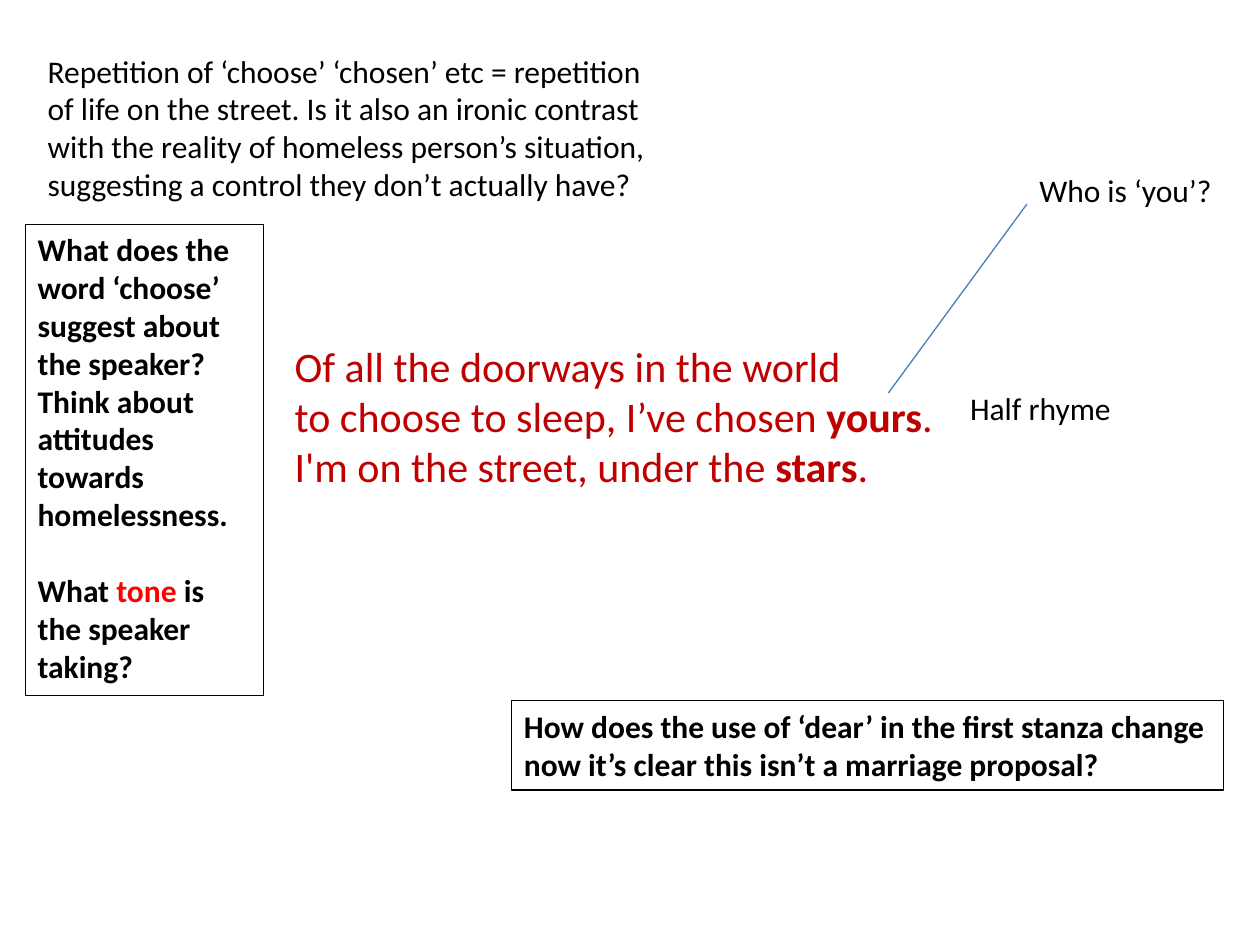
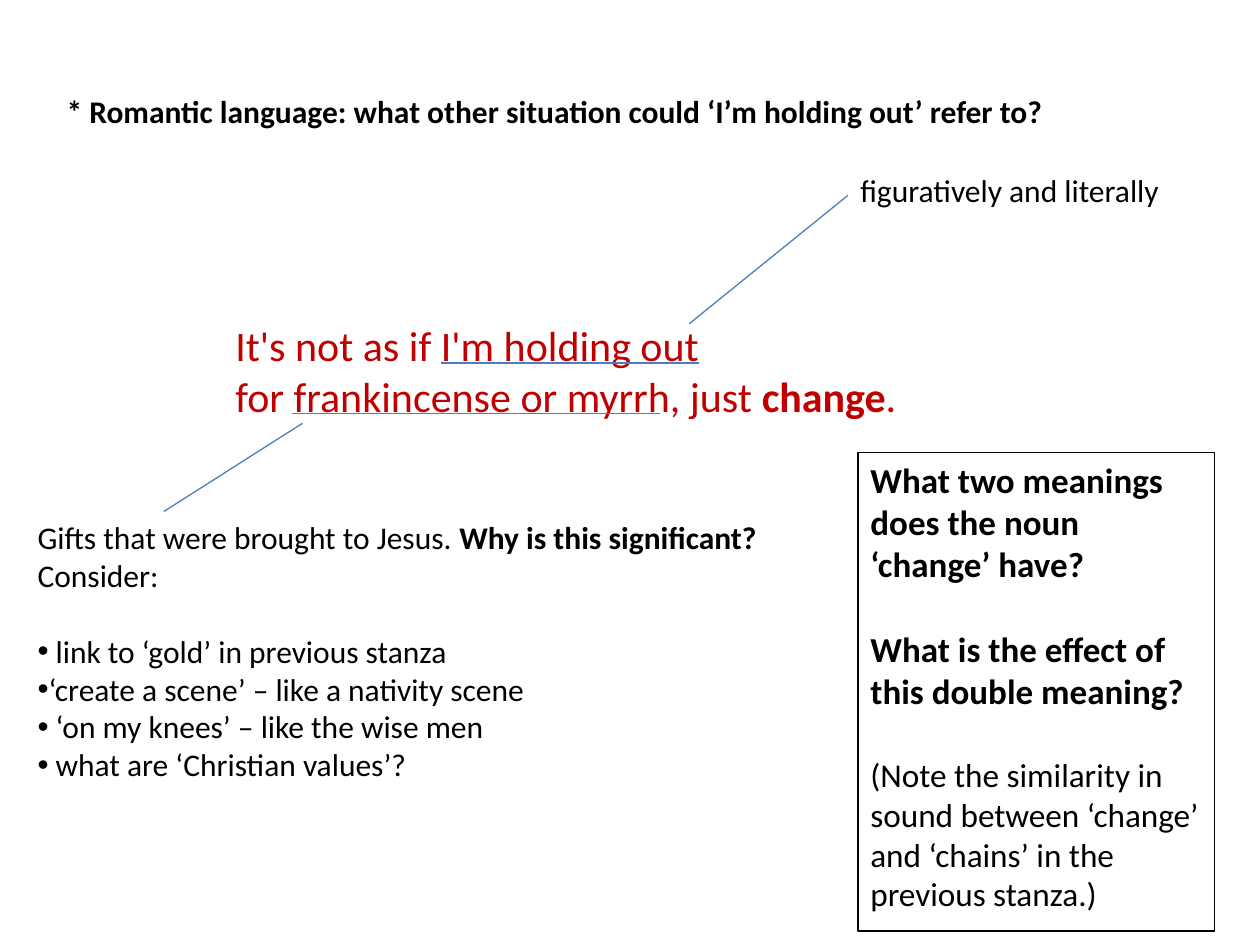
from pptx import Presentation
from pptx.dml.color import RGBColor
from pptx.enum import shapes, text
from pptx.oxml.ns import qn
from pptx.util import Inches, Pt
from lxml import etree

COLOURS = {"ink": "000000", "poem": "C00000", "tone": "FF0000", "link": "4B7EBC"}
FONT = "Calibri"
NOTE_SIZE = 18
POEM_SIZE = 24
LINE_HEIGHT = 1.22


def colour(name):
    return RGBColor.from_string(COLOURS[name])


def add_piece(paragraph, wording, size, ink, bold):
    for index, line in enumerate(wording.split("\n")):
        if index:
            paragraph.add_line_break()
        run = paragraph.add_run()
        run.text = line
        run.font.name = FONT
        run.font.size = Pt(size)
        run.font.bold = bold
        run.font.color.rgb = colour(ink)


def add_bullet(paragraph):
    properties = paragraph._p.get_or_add_pPr()
    etree.SubElement(properties, qn("a:buFont")).set("typeface", "Arial")
    etree.SubElement(properties, qn("a:buChar")).set("char", "•")


def add_note(slide, left, top, width, height, paragraphs, size=NOTE_SIZE,
             ink="ink", bold=False, wrap=False, boxed=False):
    note = slide.shapes.add_textbox(Inches(left), Inches(top), Inches(width), Inches(height))
    if boxed:
        note.line.color.rgb = colour("ink")
        note.line.width = Pt(0.75)
    frame = note.text_frame
    frame.word_wrap = wrap
    frame.auto_size = text.MSO_AUTO_SIZE.SHAPE_TO_FIT_TEXT
    for index, content in enumerate(paragraphs):
        paragraph = frame.paragraphs[0] if index == 0 else frame.add_paragraph()
        if content.get("gap"):
            paragraph.space_before = Pt(round(size * LINE_HEIGHT, 1))
        if content.get("bullet"):
            add_bullet(paragraph)
        for wording, changes in content["pieces"]:
            style = {"size": size, "ink": ink, "bold": bold, **changes}
            add_piece(paragraph, wording, **style)


def para(*pieces, gap=False, bullet=False):
    pairs = [(piece, {}) if isinstance(piece, str) else piece for piece in pieces]
    return {"pieces": pairs, "gap": gap, "bullet": bullet}


def strong(wording):
    return wording, {"bold": True}


def add_link(slide, start, end):
    link = slide.shapes.add_connector(
        shapes.MSO_CONNECTOR.STRAIGHT, *(Inches(value) for value in start + end))
    link.line.color.rgb = colour("link")
    link.line.width = Pt(0.75)
    etree.SubElement(link._element.spPr, qn("a:effectLst"))


def build_doorways(slide):
    add_note(slide, 2.24, 2.65, 5.29, 1.62, [
        para("Of all the doorways in the world\nto choose to sleep, I’ve chosen ",
             strong("yours"), ".\nI'm on the street, under the ", strong("stars"), "."),
    ], size=POEM_SIZE, ink="poem")
    add_note(slide, 0.2, 1.78, 1.89, 3.74, [
        para("What does the word ‘choose’ suggest about the speaker? "
             "Think about attitudes towards homelessness."),
        para("What ", ("tone", {"ink": "tone"}), " is the speaker taking?", gap=True),
    ], bold=True, wrap=True, boxed=True)
    add_note(slide, 7.6, 3.04, 1.39, 0.4, [para("Half rhyme")])
    add_note(slide, 4.06, 5.56, 5.65, 0.71, [
        para("How does the use of ‘dear’ in the first stanza change"),
        para("now it’s clear this isn’t a marriage proposal?"),
    ], bold=True, boxed=True)
    add_link(slide, (7.05, 3.12), (8.15, 1.62))
    add_note(slide, 8.15, 1.31, 1.59, 0.4, [para("Who is ‘you’?")])
    add_note(slide, 0.28, 0.36, 5, 1.31, [
        para("Repetition of ‘choose’ ‘chosen’ etc = repetition of life on the street. "
             "Is it also an ironic contrast with the reality of homeless person’s "
             "situation, suggesting a control they don’t actually have?"),
    ], wrap=True)


def build_change(slide):
    add_note(slide, 1.77, 2.49, 5.83, 0.91, [
        para("It's not as if I'm holding out\nfor frankincense or myrrh, just ",
             strong("change"), "."),
    ], size=POEM_SIZE, ink="poem", wrap=True)
    add_link(slide, (3.5, 2.88), (5.55, 2.88))
    add_link(slide, (5.47, 2.57), (6.73, 1.55))
    add_note(slide, 6.73, 1.31, 2.6, 0.4, [para("figuratively and literally")])
    add_link(slide, (2.4, 3.36), (1.3, 4.06))
    considerations = [
        " link to ‘gold’ in previous stanza",
        "‘create a scene’ – like a nativity scene",
        " ‘on my knees’ – like the wise men",
        " what are ‘Christian values’?",
    ]
    add_note(slide, 0.2, 4.06, 6.03, 2.22, [
        para("Gifts that were brought to Jesus. ", strong("Why is this significant?")),
        para("Consider:"),
        *(para(wording, gap=index == 0, bullet=True)
          for index, wording in enumerate(considerations)),
    ])
    add_link(slide, (2.32, 3.28), (5.24, 3.28))
    add_note(slide, 6.81, 3.59, 2.83, 3.8, [
        para("What two meanings does the noun ‘change’ have?"),
        para("What is the effect of this double meaning?", gap=True),
        para(("(Note the similarity in sound between ‘change’ and ‘chains’ "
              "in the previous stanza.)", {"size": 19, "bold": False}), gap=True),
    ], size=20, bold=True, wrap=True, boxed=True)
    add_note(slide, 0.43, 0.68, 8.02, 0.4, [
        para("* Romantic language: what other situation could ‘I’m holding out’ refer to?"),
    ], bold=True)


def main():
    deck = Presentation()
    deck.slide_width = Inches(10)
    deck.slide_height = Inches(7.5)
    for build in (build_doorways, build_change):
        build(deck.slides.add_slide(deck.slide_layouts[6]))
    deck.save("out.pptx")


if __name__ == "__main__":
    main()
